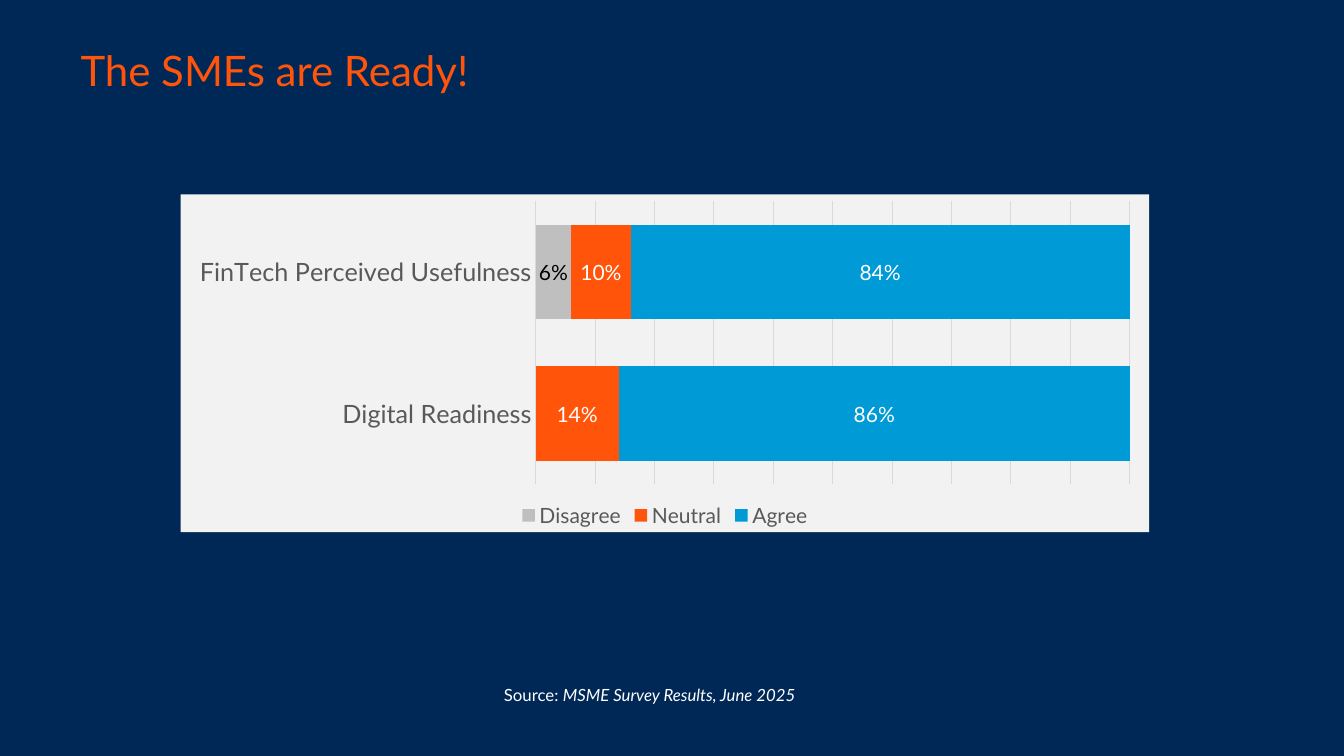
import pptx
import pptx.chart.data
import pptx.dml.color
import pptx.enum.chart
import pptx.enum.text
import pptx.oxml
import pptx.oxml.ns
import pptx.util
from pptx.util import Cm, Pt

FONT = "Lato"
COLOURS = {
    "navy": "002856",
    "orange": "FF540A",
    "blue": "009AD7",
    "silver": "BFBFBF",
    "panel": "F2F2F2",
    "grid": "D9D9D9",
    "grey": "595959",
    "white": "FFFFFF",
    "black": "000000",
}
CATEGORIES = ["Digital Readiness", "FinTech Perceived Usefulness"]
# name, values, bar colour, label colour
ANSWERS = [
    ("Disagree", (None, 0.06), "silver", "black"),
    ("Neutral", (0.14, 0.10), "orange", "white"),
    ("Agree", (0.86, 0.84), "blue", "white"),
]


def rgb(name):
    return pptx.dml.color.RGBColor.from_string(COLOURS[name])


def set_fill(fill, colour):
    fill.solid()
    fill.fore_color.rgb = rgb(colour)


def set_font(font, size, colour):
    font.name = FONT
    font.size = Pt(size)
    font.color.rgb = rgb(colour)


def set_line(line, colour):
    line.color.rgb = rgb(colour)
    line.width = Pt(0.75)


def add_text(page, place, spans, size, colour, align):
    """Add a one-paragraph box; spans are (text, italic) pairs."""
    box = page.shapes.add_textbox(*map(Cm, place))
    box.text_frame.word_wrap = True
    para = box.text_frame.paragraphs[0]
    para.alignment = align
    set_font(para.font, size, colour)
    for text, italic in spans:
        span = para.add_run()
        span.text = text
        if italic:
            span.font.italic = True


def fill_chart_area(chart, colour):
    """Fill the chart background, which python-pptx has no method for."""
    area = pptx.oxml.parse_xml(
        f'<c:spPr {pptx.oxml.ns.nsdecls("c", "a")}><a:solidFill>'
        f'<a:srgbClr val="{COLOURS[colour]}"/></a:solidFill>'
        "<a:ln><a:noFill/></a:ln></c:spPr>"
    )
    chart.element.find(pptx.oxml.ns.qn("c:txPr")).addprevious(area)


def style_axes(chart):
    category_axis = chart.category_axis
    category_axis.major_tick_mark = pptx.enum.chart.XL_TICK_MARK.NONE
    category_axis.has_major_gridlines = False
    set_font(category_axis.tick_labels.font, 18, "grey")
    set_line(category_axis.format.line, "grid")

    value_axis = chart.value_axis
    value_axis.visible = False
    value_axis.has_major_gridlines = True
    set_line(value_axis.major_gridlines.format.line, "grid")


def style_series(series, bar_colour, label_colour):
    set_fill(series.format.fill, bar_colour)
    series.invert_if_negative = False
    labels = series.data_labels
    labels.show_value = True
    labels.number_format = "0%"
    labels.number_format_is_linked = False
    labels.position = pptx.enum.chart.XL_LABEL_POSITION.CENTER
    set_font(labels.font, 15, label_colour)


def add_survey_chart(page, place):
    data = pptx.chart.data.CategoryChartData(number_format="0%")
    data.categories = CATEGORIES
    for name, values, _, _ in ANSWERS:
        data.add_series(name, values)
    chart = page.shapes.add_chart(
        pptx.enum.chart.XL_CHART_TYPE.BAR_STACKED_100, *map(Cm, place), data
    ).chart
    set_font(chart.font, 12, "black")
    fill_chart_area(chart, "panel")
    chart.has_title = False
    chart.has_legend = True
    chart.legend.position = pptx.enum.chart.XL_LEGEND_POSITION.BOTTOM
    chart.legend.include_in_layout = False
    set_font(chart.legend.font, 15, "grey")
    style_axes(chart)

    plot = chart.plots[0]
    plot.gap_width = 50
    plot.overlap = 100
    plot.vary_by_categories = False
    for series, (_, _, bar_colour, label_colour) in zip(plot.series, ANSWERS):
        style_series(series, bar_colour, label_colour)


def main():
    deck = pptx.Presentation()
    deck.slide_width, deck.slide_height = Cm(33.87), Cm(19.05)
    page = deck.slides.add_slide(deck.slide_layouts[6])
    set_fill(page.background.fill, "navy")

    align = pptx.enum.text.PP_ALIGN
    add_text(page, (4.17, 17.12, 24.41, 0.76),
             [("Source: ", False), ("MSME Survey Results, June 2025", True)],
             12, "white", align.CENTER)
    add_text(page, (1.78, 0.99, 29.03, 1.55),
             [("The SMEs are Ready!", False)], 30, "orange", align.LEFT)
    add_survey_chart(page, (4.55, 4.9, 24.41, 8.51))
    deck.save("out.pptx")


if __name__ == "__main__":
    main()
